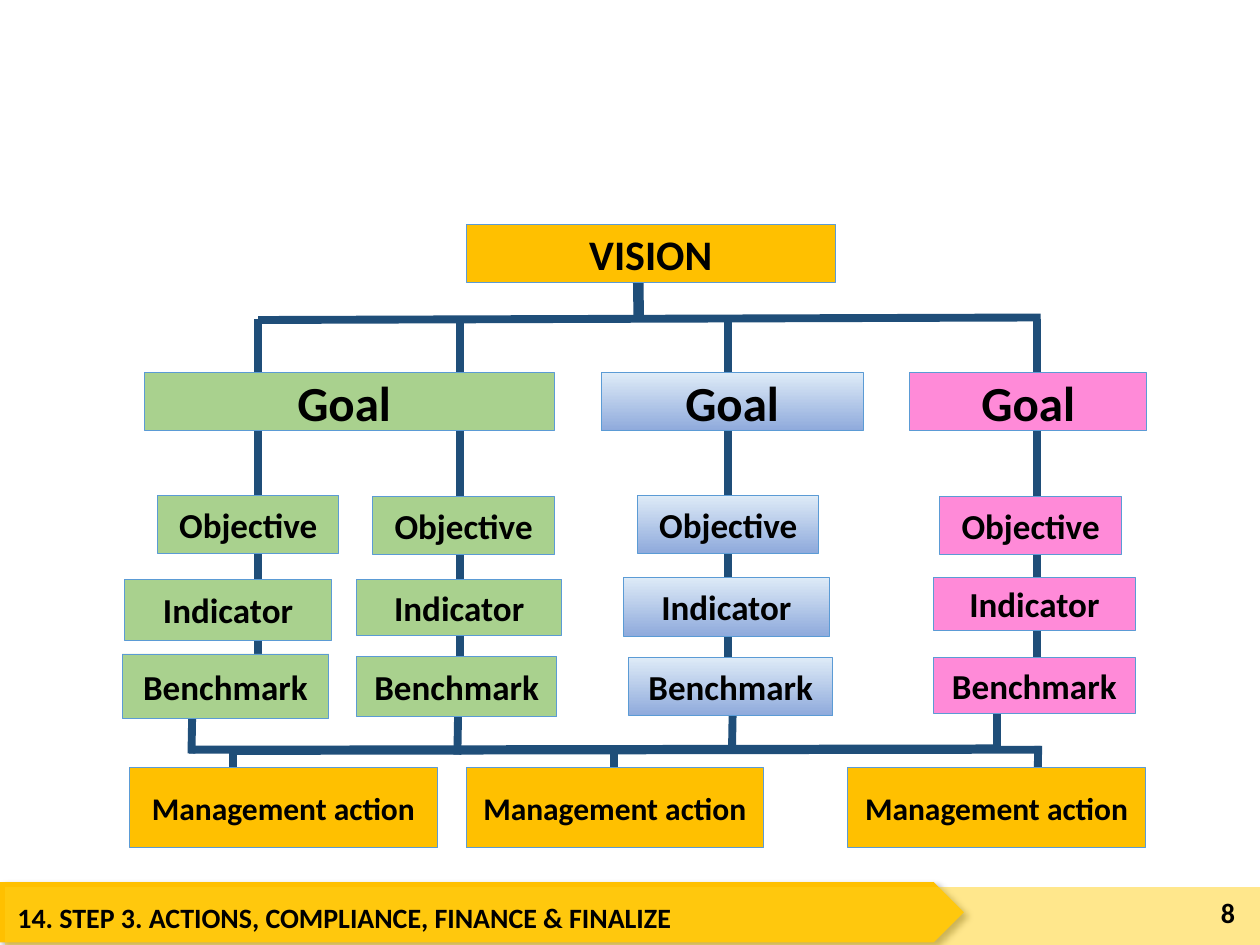
from dataclasses import dataclass
from typing import Optional

from lxml import etree
from pptx import Presentation
from pptx import util as u
from pptx.dml.color import RGBColor
from pptx.enum import shapes, text
from pptx.oxml import ns

BLACK = RGBColor(0x00, 0x00, 0x00)
GOLD = RGBColor(0xFF, 0xC0, 0x00)
PALE_GOLD = RGBColor(0xFF, 0xD0, 0x1B)
GREEN = RGBColor(0xA9, 0xD1, 0x8E)
PINK = RGBColor(0xFF, 0x8A, 0xD8)
BLUE = RGBColor(0x8F, 0xAA, 0xDC)
PALE_BLUE = RGBColor(0xDE, 0xEB, 0xF7)
OUTLINE = RGBColor(0x5B, 0x9B, 0xD5)
NAVY = RGBColor(0x1F, 0x4E, 0x79)
FONT = "Calibri"


@dataclass
class Box:
    label: str
    left: float
    top: float
    width: float
    height: float
    size: int
    color: RGBColor
    fade: Optional[RGBColor] = None


@dataclass
class Line:
    x1: float
    y1: float
    x2: float
    y2: float
    weight: float = 4.5


@dataclass
class Branch:
    color: RGBColor
    fade: Optional[RGBColor]
    objective: tuple
    indicator: tuple
    benchmark: tuple


def write(tf, words: str, *, size: float, align=text.PP_ALIGN.LEFT,
          anchor=text.MSO_ANCHOR.TOP) -> None:
    tf.word_wrap = True
    tf.vertical_anchor = anchor
    p = tf.paragraphs[0]
    p.alignment = align
    r = p.add_run()
    r.text = words
    r.font.name = FONT
    r.font.size = u.Pt(size)
    r.font.bold = True
    r.font.color.rgb = BLACK


def add_label(s, words: str, left: float, top: float, width: float,
              height: float, **fmt) -> None:
    sp = s.shapes.add_textbox(*map(u.Inches, (left, top, width, height)))
    write(sp.text_frame, words, **fmt)


def add_panel(s, kind, left: float, top: float, width: float, height: float,
              color: RGBColor):
    sp = s.shapes.add_shape(kind, *map(u.Inches, (left, top, width, height)))
    sp.shadow.inherit = False
    sp.fill.solid()
    sp.fill.fore_color.rgb = color
    sp.line.fill.background()
    return sp


def add_box(s, box: Box) -> None:
    sp = add_panel(s, shapes.MSO_SHAPE.RECTANGLE, box.left, box.top,
                   box.width, box.height, box.color)
    if box.fade is not None:
        sp.fill.gradient()
        sp.fill.gradient_angle = 90
        for stop, color in zip(sp.fill.gradient_stops, (box.color, box.fade)):
            stop.color.rgb = color
    sp.line.color.rgb = OUTLINE
    sp.line.width = u.Pt(0.5)
    write(sp.text_frame, box.label, size=box.size,
          align=text.PP_ALIGN.CENTER, anchor=text.MSO_ANCHOR.MIDDLE)


def add_line(s, line: Line) -> None:
    ends = map(u.Inches, (line.x1, line.y1, line.x2, line.y2))
    sp = s.shapes.add_connector(shapes.MSO_CONNECTOR.STRAIGHT, *ends)
    sp.line.color.rgb = NAVY
    sp.line.width = u.Pt(line.weight)
    etree.SubElement(sp._element.spPr, ns.qn("a:effectLst"))


def add_drop_shadow(sp) -> None:
    effects = sp._element.spPr.find(ns.qn("a:effectLst"))
    shadow = etree.SubElement(effects, ns.qn("a:outerShdw"),
                              blurRad=str(u.Pt(4)), dist=str(u.Pt(3)),
                              dir="2700000", algn="tl", rotWithShape="0")
    color = etree.SubElement(shadow, ns.qn("a:srgbClr"), val=str(BLACK))
    etree.SubElement(color, ns.qn("a:alpha"), val="40000")


def add_footer(s) -> None:
    arrow = add_panel(s, shapes.MSO_SHAPE.PENTAGON, 0, 7, 7.65, 0.48, GOLD)
    add_drop_shadow(arrow)
    band = add_panel(s, shapes.MSO_SHAPE.RECTANGLE, 0.04, 7.04, 9.96, 0.49,
                     PALE_GOLD)
    color = band._element.spPr.find(".//" + ns.qn("a:srgbClr"))
    etree.SubElement(color, ns.qn("a:alpha"), val="50000")
    add_label(s, "14. STEP 3. ACTIONS, COMPLIANCE, FINANCE & FINALIZE",
              0.04, 7.1, 7.35, 0.41, size=16)
    add_label(s, "8", 9.17, 7.04, 0.73, 0.4, size=16,
              align=text.PP_ALIGN.RIGHT, anchor=text.MSO_ANCHOR.MIDDLE)


ACTION_LINES = [
    Line(1.85, 5.96, 1.85, 6.52),
    Line(1.85, 5.96, 8.26, 5.95),
    Line(8.24, 5.92, 8.23, 6.48),
    Line(4.87, 5.94, 4.87, 6.5),
    Line(7.91, 5.94, 7.91, 5.39),
    Line(7.91, 5.94, 1.5, 5.95),
    Line(1.52, 5.98, 1.53, 5.42),
    Line(5.81, 5.93, 5.82, 5.37),
    Line(3.63, 5.99, 3.64, 5.43),
]
GOAL_LINES = [
    Line(5.06, 1.84, 5.07, 2.55, 6),
    *(Line(x, 2.53, x, 5.45) for x in (2.05, 3.65, 5.78, 8.23)),
    Line(2.05, 2.54, 8.26, 2.52),
]
TOP_BOXES = [
    *(Box("Management action", left, 6.09, width, 0.64, 18, GOLD)
      for left, width in ((1.03, 2.44), (3.7, 2.36), (6.73, 2.36))),
    Box("VISION", 3.7, 1.78, 2.93, 0.46, 24, GOLD),
    Box("Goal ", 1.15, 2.96, 3.25, 0.46, 28, GREEN),
    Box("Goal", 4.77, 2.96, 2.08, 0.46, 28, BLUE, PALE_BLUE),
    Box("Goal", 7.22, 2.96, 1.88, 0.46, 28, PINK),
]
BRANCHES = [
    Branch(GREEN, None, (1.25, 3.93, 1.44, 0.46), (0.99, 4.6, 1.64, 0.48),
           (0.97, 5.19, 1.64, 0.51)),
    Branch(GREEN, None, (2.96, 3.94, 1.44, 0.46), (2.83, 4.6, 1.63, 0.44),
           (2.83, 5.21, 1.59, 0.48)),
    Branch(BLUE, PALE_BLUE, (5.06, 3.93, 1.44, 0.46),
           (4.95, 4.58, 1.63, 0.47), (4.99, 5.22, 1.62, 0.46)),
    Branch(PINK, None, (7.46, 3.94, 1.44, 0.46), (7.41, 4.58, 1.6, 0.42),
           (7.41, 5.22, 1.6, 0.44)),
]


def main() -> None:
    prs = Presentation()
    prs.slide_width, prs.slide_height = u.Inches(10), u.Inches(7.5)
    s = prs.slides.add_slide(prs.slide_layouts[6])
    add_footer(s)
    for line in ACTION_LINES + GOAL_LINES:
        add_line(s, line)
    for box in TOP_BOXES:
        add_box(s, box)
    for branch in BRANCHES:
        for label, place in (("Objective", branch.objective),
                             ("Indicator", branch.indicator),
                             ("Benchmark", branch.benchmark)):
            add_box(s, Box(label, *place, 20, branch.color, branch.fade))
    prs.save("out.pptx")


if __name__ == "__main__":
    main()
